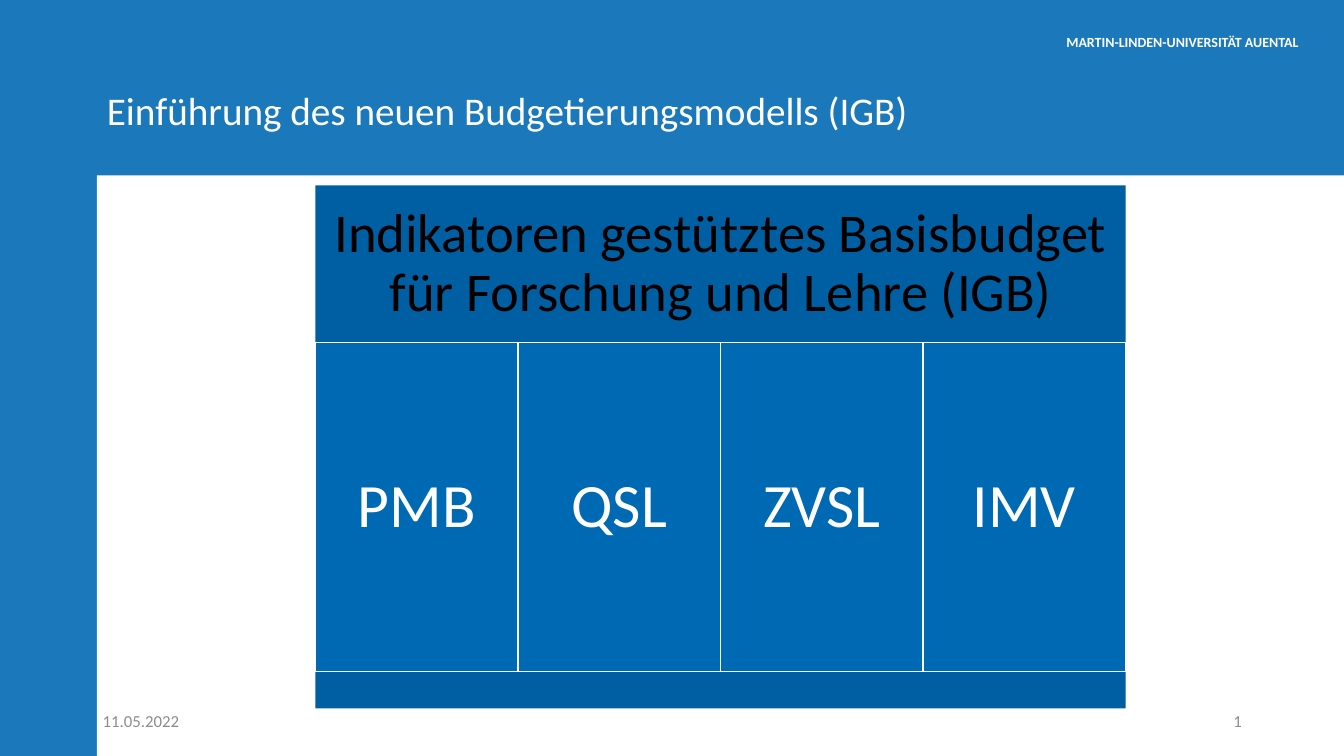
from pptx import Presentation
from pptx.dml.color import RGBColor
from pptx.enum.shapes import MSO_SHAPE
from pptx.enum.text import MSO_ANCHOR, PP_ALIGN
from pptx.util import Cm, Pt

RECTANGLE = MSO_SHAPE.RECTANGLE
TOP, MIDDLE = MSO_ANCHOR.TOP, MSO_ANCHOR.MIDDLE
LEFT, CENTER, RIGHT = PP_ALIGN.LEFT, PP_ALIGN.CENTER, PP_ALIGN.RIGHT

FONT = "Calibri"
COLORS = {
    "background": "1A78BB",
    "white": "FFFFFF",
    "black": "000000",
    "gray": "8C8C8C",
    "bar": "005FA2",
    "column": "0069B3",
}

TITLE = "Einführung des neuen Budgetierungsmodells (IGB)"
UNIVERSITY = "MARTIN-LINDEN-UNIVERSITÄT AUENTAL"
DATE = "11.05.2022"
PAGE_NUMBER = "1"
MODEL = "Indikatoren gestütztes Basisbudget für Forschung und Lehre (IGB)"
BUDGETS = ["PMB", "QSL", "ZVSL", "IMV"]

SLIDE_WIDTH, SLIDE_HEIGHT = 33.87, 19.05
PANEL_LEFT, PANEL_TOP = 2.44, 4.42
MODEL_LEFT, MODEL_TOP, MODEL_WIDTH = 7.95, 4.67, 20.42
HEAD_HEIGHT, COLUMN_HEIGHT, BASE_HEIGHT = 3.96, 8.31, 0.91
FOOTER_TOP, FOOTER_WIDTH, FOOTER_HEIGHT = 17.65, 7.62, 1.02


def color(name):
    return RGBColor.from_string(COLORS[name])


def write(shape, text, size, font_color, align, anchor, bold=False, spacing=0.9, inset=None):
    text_frame = shape.text_frame
    text_frame.text = text
    text_frame.word_wrap = True
    text_frame.vertical_anchor = anchor
    if inset is not None:
        text_frame.margin_left = text_frame.margin_right = Cm(inset)
        text_frame.margin_top = text_frame.margin_bottom = Cm(inset)
    paragraph = text_frame.paragraphs[0]
    paragraph.alignment = align
    paragraph.line_spacing = spacing
    font = paragraph.runs[0].font
    font.name, font.size, font.bold = FONT, Pt(size), bold
    font.color.rgb = color(font_color)


def add_rectangle(slide, left, top, width, height, fill, line=None):
    shape = slide.shapes.add_shape(RECTANGLE, Cm(left), Cm(top), Cm(width), Cm(height))
    shape.shadow.inherit = False
    shape.fill.solid()
    shape.fill.fore_color.rgb = color(fill)
    if line:
        shape.line.color.rgb = color(line)
        shape.line.width = Pt(1)
    else:
        shape.line.fill.background()
    return shape


def add_label(slide, left, top, width, height):
    return slide.shapes.add_textbox(Cm(left), Cm(top), Cm(width), Cm(height))


def add_frame(slide):
    slide.background.fill.solid()
    slide.background.fill.fore_color.rgb = color("background")
    add_rectangle(slide, PANEL_LEFT, PANEL_TOP, SLIDE_WIDTH - PANEL_LEFT,
                  SLIDE_HEIGHT - PANEL_TOP, "white")
    title = slide.shapes.title
    title.left, title.top = Cm(PANEL_LEFT), Cm(2.18)
    title.width, title.height = Cm(SLIDE_WIDTH - PANEL_LEFT), Cm(2.69)
    write(title, TITLE, 28, "white", LEFT, TOP)
    university = add_label(slide, 19.05, 0.76, 13.92, 0.48)
    write(university, UNIVERSITY, 10, "white", RIGHT, TOP, bold=True)
    for text, left, align in [(DATE, 2.34, LEFT), (PAGE_NUMBER, 23.93, RIGHT)]:
        footer = add_label(slide, left, FOOTER_TOP, FOOTER_WIDTH, FOOTER_HEIGHT)
        write(footer, text, 12, "gray", align, MIDDLE, spacing=1.0)


def add_model(slide):
    head = add_rectangle(slide, MODEL_LEFT, MODEL_TOP, MODEL_WIDTH, HEAD_HEIGHT, "bar")
    write(head, MODEL, 39, "black", CENTER, MIDDLE, inset=0.4)
    column_top = MODEL_TOP + HEAD_HEIGHT
    column_width = MODEL_WIDTH / len(BUDGETS)
    for index, budget in enumerate(BUDGETS):
        column = add_rectangle(slide, MODEL_LEFT + index * column_width, column_top,
                               column_width, COLUMN_HEIGHT, "column", "white")
        write(column, budget, 44, "white", CENTER, MIDDLE, inset=0.45)
    add_rectangle(slide, MODEL_LEFT, column_top + COLUMN_HEIGHT, MODEL_WIDTH,
                  BASE_HEIGHT, "bar")


def main():
    presentation = Presentation()
    presentation.slide_width, presentation.slide_height = Cm(SLIDE_WIDTH), Cm(SLIDE_HEIGHT)
    slide = presentation.slides.add_slide(presentation.slide_layouts[5])
    add_frame(slide)
    add_model(slide)
    presentation.save("out.pptx")


if __name__ == "__main__":
    main()
